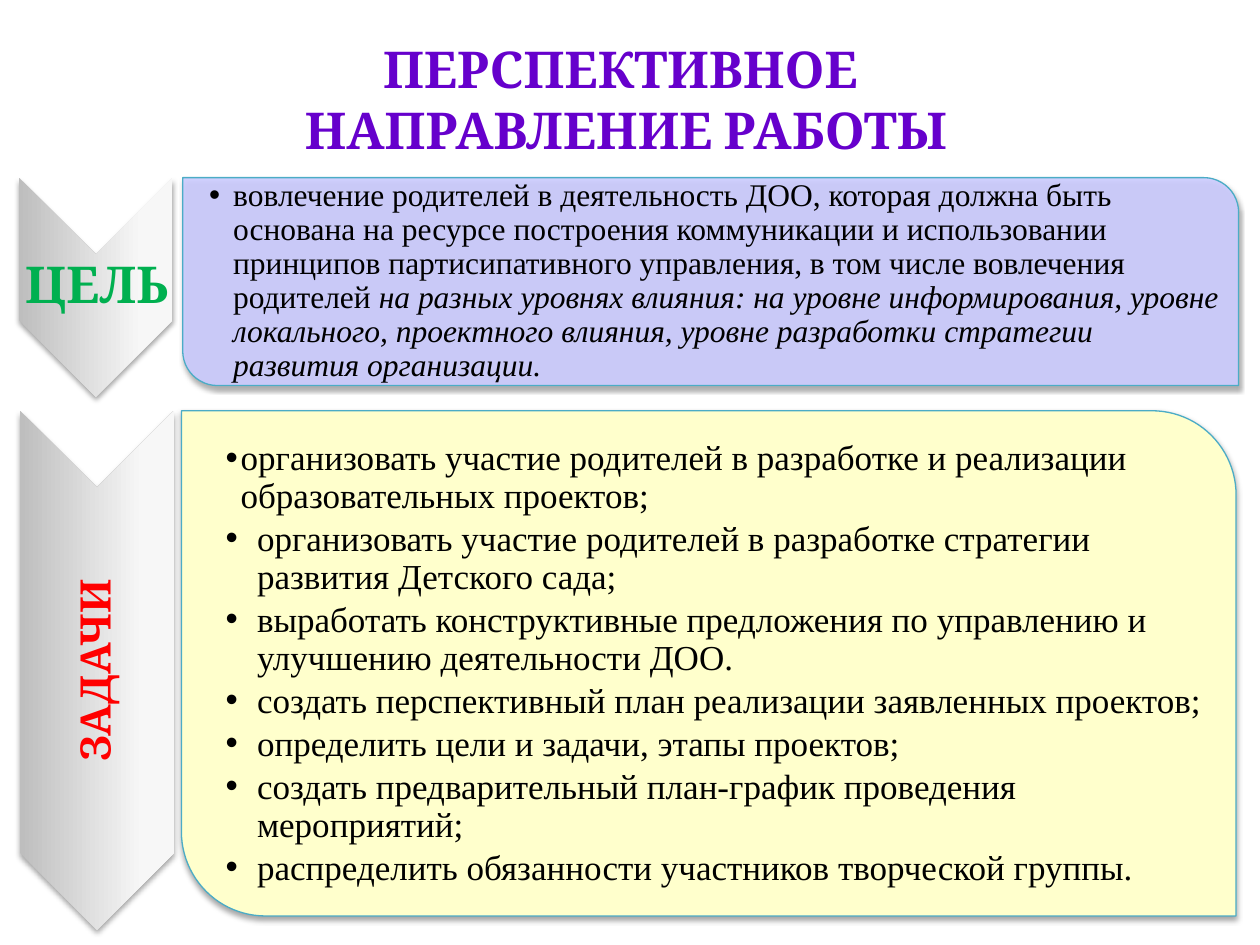
from dataclasses import dataclass

from lxml.etree import SubElement
from pptx import Presentation
from pptx.dml.color import RGBColor
from pptx.enum.shapes import MSO_SHAPE
from pptx.enum.text import MSO_ANCHOR, MSO_AUTO_SIZE, PP_ALIGN
from pptx.oxml import parse_xml
from pptx.oxml.ns import nsdecls, qn
from pptx.util import Inches, Pt


@dataclass(frozen=True)
class Theme:
    heading_font: str = "Cambria"
    body_font: str = "Times New Roman"
    title_color: str = "6600CC"
    text_color: str = "000000"
    panel_line: str = "4BACC6"
    chevron_stops: tuple = ((0, "BEBEBE"), (80, "F7F7F7"), (100, "F8F8F8"))
    title_size: int = 29


@dataclass(frozen=True)
class Box:
    left: float
    top: float
    width: float
    height: float

    def lengths(self) -> tuple:
        return tuple(Inches(n) for n in (self.left, self.top, self.width, self.height))

    def before_quarter_turn(self) -> "Box":
        """Frame that covers this box once it is rotated by 90 degrees."""
        shift = (self.width - self.height) / 2
        return Box(self.left + shift, self.top - shift, self.height, self.width)


@dataclass(frozen=True)
class Item:
    text: str
    italic_text: str = ""
    indent: float = 0.25


@dataclass(frozen=True)
class Section:
    label: str
    label_color: str
    label_size: int
    label_box: Box
    vertical: bool
    chevron_box: Box
    panel_box: Box
    panel_color: str
    panel_opacity: int
    list_box: Box
    list_inset: float
    list_size: int
    items: tuple


THEME = Theme()
SECTIONS = (
    Section(
        "ЦЕЛЬ", "00B050", 29, Box(0.16, 2.02, 1.22, 0.52), False,
        Box(0.15, 1.41, 1.22, 1.74), Box(1.45, 1.41, 8.38, 1.65), "CCCCFF", 90,
        Box(1.52, 1.49, 8.22, 1.49), 0.14, 18,
        (Item(
            "вовлечение родителей в деятельность ДОО, которая должна быть основана "
            "на ресурсе построения коммуникации и использовании принципов "
            "партисипативного управления, в том числе вовлечения родителей ",
            "на разных уровнях влияния: на уровне информирования, уровне локального, "
            "проектного влияния, уровне разработки стратегии развития организации.",
            indent=0.19),),
    ),
    Section(
        "ЗАДАЧИ", "FF0000", 24, Box(0.16, 3.87, 1.22, 2.9), True,
        Box(0.16, 3.26, 1.22, 4.12), Box(1.44, 3.26, 8.37, 4.01), "FFFFCC", 100,
        Box(1.63, 3.46, 7.98, 3.62), 0.16, 20,
        (
            Item("организовать участие родителей в разработке и реализации "
                 "образовательных проектов;", indent=0.12),
            Item("организовать участие родителей в разработке стратегии развития "
                 "Детского сада;"),
            Item("выработать конструктивные предложения по управлению и улучшению "
                 "деятельности ДОО."),
            Item("создать перспективный план реализации заявленных проектов;"),
            Item("определить цели и задачи, этапы проектов;"),
            Item("создать предварительный план-график проведения мероприятий;"),
            Item("распределить обязанности участников творческой группы."),
        ),
    ),
)


def place(shape, box: Box) -> None:
    shape.left, shape.top, shape.width, shape.height = box.lengths()


def set_font(font, name: str, size: int, color: str, bold: bool = False) -> None:
    font.name, font.size, font.bold = name, Pt(size), bold
    font.color.rgb = RGBColor.from_string(color)


def set_frame(text_frame, left: float, other: float) -> None:
    text_frame.word_wrap = True
    text_frame.auto_size = MSO_AUTO_SIZE.NONE
    text_frame.vertical_anchor = MSO_ANCHOR.MIDDLE
    text_frame.margin_left = Inches(left)
    text_frame.margin_top = text_frame.margin_right = text_frame.margin_bottom = Inches(other)


def add_shadow(shape) -> None:
    shape.element.spPr.append(parse_xml(
        f'<a:effectLst {nsdecls("a")}><a:outerShdw blurRad="{Pt(3.1)}" dist="{Pt(1.8)}" '
        'dir="5400000" rotWithShape="0"><a:srgbClr val="000000"><a:alpha val="35000"/>'
        '</a:srgbClr></a:outerShdw></a:effectLst>'))


def add_turned_shape(slide, kind: MSO_SHAPE, box: Box):
    shape = slide.shapes.add_shape(kind, *box.before_quarter_turn().lengths())
    shape.rotation = 90
    return shape


def add_chevron(slide, box: Box) -> None:
    chevron = add_turned_shape(slide, MSO_SHAPE.CHEVRON, box)
    chevron.fill.gradient()
    chevron.fill.gradient_angle = 90
    stops = chevron.element.spPr.find(".//" + qn("a:gsLst"))
    for stop in list(stops):
        stops.remove(stop)
    for position, color in THEME.chevron_stops:
        stop = SubElement(stops, qn("a:gs"), pos=str(position * 1000))
        SubElement(stop, qn("a:srgbClr"), val=color)
    chevron.line.fill.background()
    add_shadow(chevron)


def add_panel(slide, box: Box, color: str, opacity: int) -> None:
    panel = add_turned_shape(slide, MSO_SHAPE.ROUND_2_DIAG_RECTANGLE, box)
    panel.fill.solid()
    panel.fill.fore_color.rgb = RGBColor.from_string(color)
    if opacity < 100:
        fill_color = panel.element.spPr.find(qn("a:solidFill")).find(qn("a:srgbClr"))
        SubElement(fill_color, qn("a:alpha"), val=str(opacity * 1000))
    panel.line.color.rgb = RGBColor.from_string(THEME.panel_line)
    panel.line.width = Pt(0.75)
    add_shadow(panel)


def add_label(slide, section: Section) -> None:
    label = slide.shapes.add_textbox(*section.label_box.lengths())
    set_frame(label.text_frame, 0.02, 0.02)
    if section.vertical:
        label.element.find(".//" + qn("a:bodyPr")).set("vert", "vert270")
    paragraph = label.text_frame.paragraphs[0]
    paragraph.text = section.label
    paragraph.alignment = PP_ALIGN.CENTER
    paragraph.line_spacing = 0.9
    set_font(paragraph.runs[0].font, THEME.heading_font, section.label_size,
             section.label_color, bold=True)


def fill_list(placeholder, section: Section) -> None:
    place(placeholder, section.list_box)
    text_frame = placeholder.text_frame
    set_frame(text_frame, section.list_inset, 0.01)
    for index, item in enumerate(section.items):
        paragraph = text_frame.add_paragraph() if index else text_frame.paragraphs[0]
        paragraph.text = item.text
        paragraph.level = 1
        paragraph.line_spacing = 0.9
        paragraph.space_before, paragraph.space_after = Pt(0), Pt(3)
        properties = paragraph._p.get_or_add_pPr()
        properties.set("marL", str(Inches(item.indent)))
        properties.set("indent", str(-Inches(item.indent)))
        SubElement(properties, qn("a:buChar"), char="•")
        if item.italic_text:
            run = paragraph.add_run()
            run.text = item.italic_text
            run.font.italic = True
        for run in paragraph.runs:
            set_font(run.font, THEME.body_font, section.list_size, THEME.text_color)
    # Bring the list in front of its panel
    placeholder.element.getparent().append(placeholder.element)


def main() -> None:
    presentation = Presentation()
    presentation.slide_width, presentation.slide_height = Inches(10), Inches(7.5)
    slide = presentation.slides.add_slide(presentation.slide_layouts.get_by_name("Two Content"))
    title, *lists = slide.placeholders
    place(title, Box(0.47, 0.16, 9, 1.25))
    title.text_frame.text = "ПЕРСПЕКТИВНОЕ \vНАПРАВЛЕНИЕ РАБОТЫ"
    for run in title.text_frame.paragraphs[0].runs:
        set_font(run.font, THEME.heading_font, THEME.title_size, THEME.title_color, bold=True)
    for section, placeholder in zip(SECTIONS, lists):
        add_chevron(slide, section.chevron_box)
        add_label(slide, section)
        add_panel(slide, section.panel_box, section.panel_color, section.panel_opacity)
        fill_list(placeholder, section)
    presentation.save("out.pptx")


if __name__ == "__main__":
    main()
